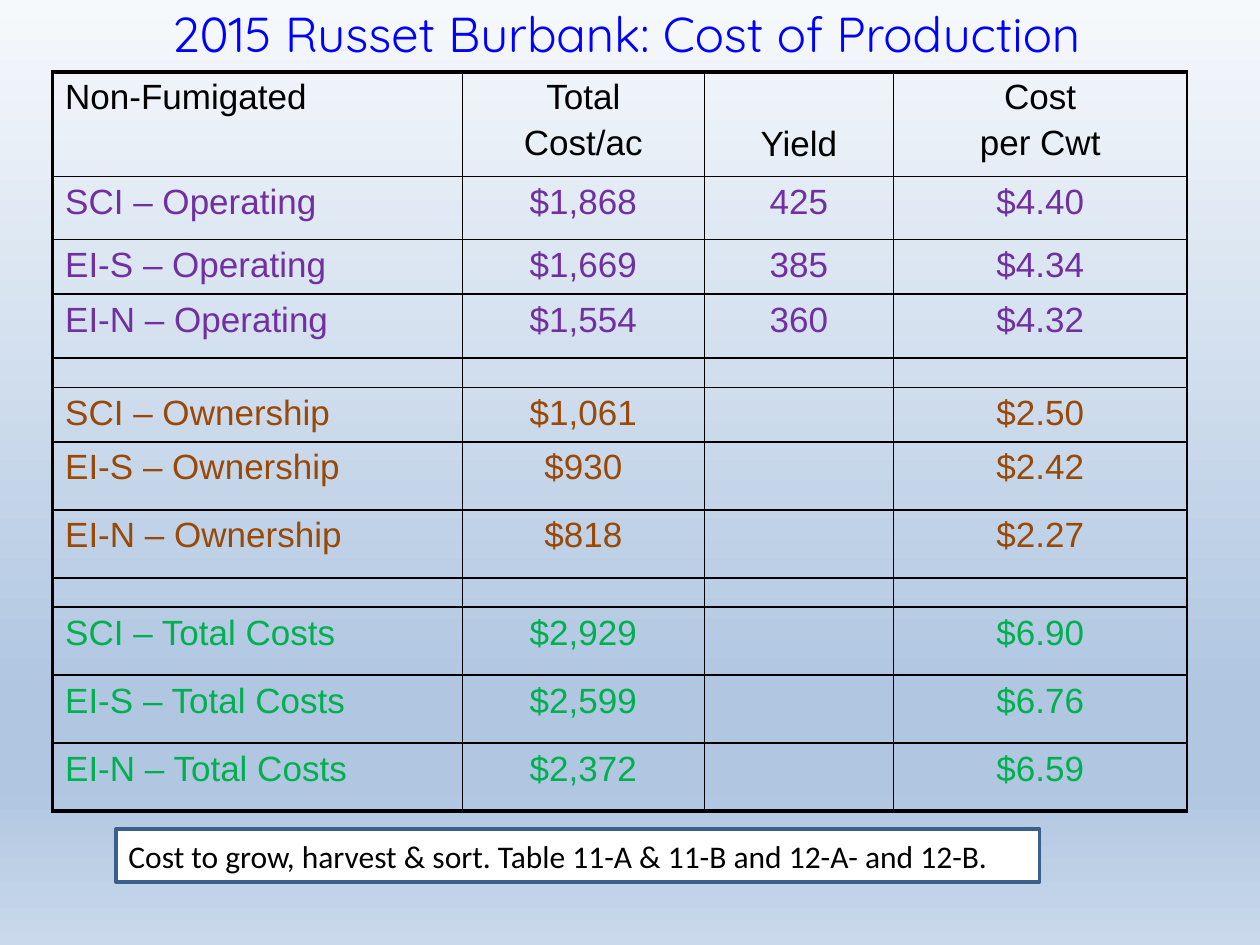
from lxml.etree import SubElement as Sub
from pptx import Presentation
from pptx.dml.color import RGBColor
from pptx.enum.shapes import MSO_SHAPE as Shape
from pptx.enum.text import MSO_ANCHOR as Anchor, MSO_AUTO_SIZE as Auto, PP_ALIGN as Align
from pptx.oxml.ns import qn
from pptx.util import Cm, Pt


def tint(hue):
    return RGBColor.from_string(hue)


def put(para, text, face, size, hue):
    run = para.add_run()
    run.text = text
    look = {"name": face, "size": Pt(size), "bold": False}
    for key, val in look.items():
        setattr(run.font, key, val)
    run.font.color.rgb = tint(hue)


deck = Presentation()
deck.slide_width, deck.slide_height = Cm(25.4), Cm(19.05)
slide = deck.slides.add_slide(deck.slide_layouts[5])

back = slide.background.fill
back.gradient()
back.gradient_angle = 270
stops = slide.element.find(".//" + qn("a:gsLst"))
for old in list(stops):
    stops.remove(old)
for pos, hue in [(0, "F6F9FC"), (74, "B0C6E1"), (83, "B0C6E1"), (100, "CAD9EB")]:
    stop = Sub(stops, qn("a:gs"), pos=str(pos * 1000))
    Sub(stop, qn("a:srgbClr"), val=hue)

title = slide.shapes.title
box = {"left": Cm(1.32), "top": Cm(-0.05), "width": Cm(22.6), "height": Cm(1.45)}
for key, val in box.items():
    setattr(title, key, val)
frame = title.text_frame
form = {"word_wrap": True, "auto_size": Auto.NONE, "vertical_anchor": Anchor.TOP}
for key, val in form.items():
    setattr(frame, key, val)
frame.paragraphs[0].alignment = Align.CENTER
put(frame.paragraphs[0], "2015 Russet Burbank: Cost of Production", "Quicksand", 28, "0000FF")

rows = [["Non-Fumigated", "Total\nCost/ac", "Yield", "Cost\nper Cwt"]]
hues = ["000000"]
costs = [
    ("Operating", "7030A0", [("$1,868", "425", "$4.40"), ("$1,669", "385", "$4.34"), ("$1,554", "360", "$4.32")]),
    ("Ownership", "984807", [("$1,061", "", "$2.50"), ("$930", "", "$2.42"), ("$818", "", "$2.27")]),
    ("Total Costs", "00B050", [("$2,929", "", "$6.90"), ("$2,599", "", "$6.76"), ("$2,372", "", "$6.59")]),
]
for kind, hue, group in costs:
    if len(rows) > 1:
        rows.append([""] * 4)
        hues.append(hue)
    for farm, vals in zip(["SCI", "EI-S", "EI-N"], group):
        rows.append([f"{farm} – {kind}", *vals])
        hues.append(hue)

wide = [8.26, 4.88, 3.81, 5.92]
high = [2.11, 1.27, 1.1, 1.29, 0.59, 1.1, 1.37, 1.37, 0.59, 1.37, 1.37, 1.37]
grid = slide.shapes.add_table(
    len(rows), len(wide), Cm(1.06), Cm(1.45), Cm(sum(wide)), Cm(sum(high))).table
grid.first_row = grid.horz_banding = False
for col, size in zip(grid.columns, wide):
    col.width = Cm(size)
for row, size in zip(grid.rows, high):
    row.height = Cm(size)

last = len(rows) - 1
for r, row in enumerate(rows):
    for c, text in enumerate(row):
        cell = grid.cell(r, c)
        body = cell.text_frame
        for n, line in enumerate(text.split("\n")):
            para = body.add_paragraph() if n else body.paragraphs[0]
            para.alignment = Align.CENTER if c else Align.LEFT
            para.space_before = Pt(3.5)
            if line:
                put(para, line, "Arial", 20, hues[r])
            else:
                Sub(para._p, qn("a:endParaRPr"), sz="700")
        if text == "Yield":
            cell.vertical_anchor = Anchor.BOTTOM
            cell.margin_bottom = Cm(0.25)
        prop = cell._tc.get_or_add_tcPr()
        thick = {"lnL": c == 0, "lnR": False, "lnT": r == 0, "lnB": r == last}
        for side, bold in thick.items():
            edge = Sub(prop, qn("a:" + side), w=str(Pt(2.25 if bold else 1)))
            Sub(Sub(edge, qn("a:solidFill")), qn("a:srgbClr"), val="000000")
        cell.fill.background()

note = slide.shapes.add_shape(Shape.RECTANGLE, Cm(2.34), Cm(16.71), Cm(18.62), Cm(1.07))
note.shadow.inherit = False
note.fill.solid()
note.fill.fore_color.rgb = tint("FFFFFF")
note.line.color.rgb = tint("3A5F8C")
note.line.width = Pt(2)
frame = note.text_frame
form = {"word_wrap": True, "vertical_anchor": Anchor.MIDDLE}
for key, val in form.items():
    setattr(frame, key, val)
frame.paragraphs[0].alignment = Align.LEFT
put(frame.paragraphs[0], "Cost to grow, harvest & sort. Table 11-A & 11-B and 12-A- and 12-B.",
    "Calibri", 18, "000000")

deck.save("out.pptx")
